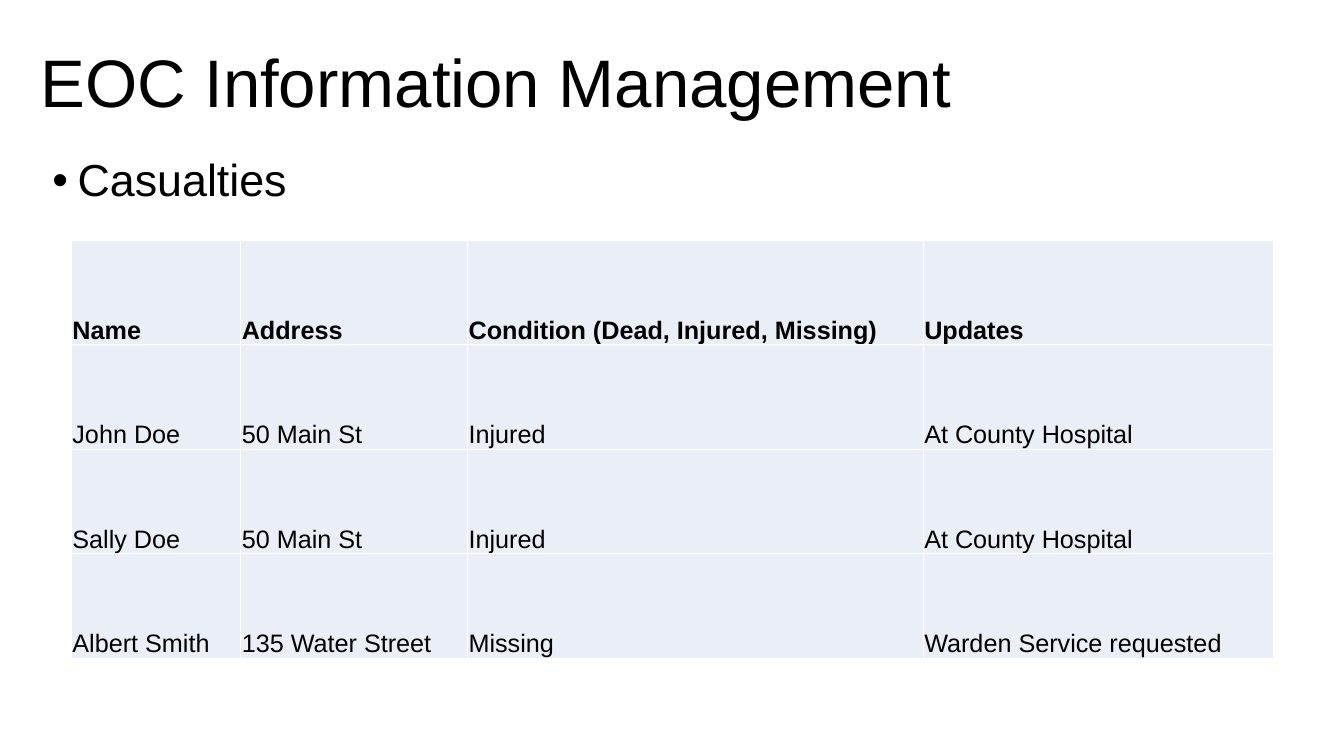
"""Build the EOC casualties slide with its status table."""
from lxml import etree
from pptx import Presentation
from pptx.dml.color import RGBColor
from pptx.enum.text import MSO_ANCHOR, MSO_AUTO_SIZE, PP_ALIGN
from pptx.oxml.ns import qn
from pptx.util import Pt

LEFT = PP_ALIGN.LEFT
TOP, MIDDLE, BOTTOM = MSO_ANCHOR.TOP, MSO_ANCHOR.MIDDLE, MSO_ANCHOR.BOTTOM
NO_FIT = MSO_AUTO_SIZE.NONE
COLORS = {"text": "000000", "cell": "EAEFF7", "border": "FFFFFF"}
COL_WIDTHS = [121, 162, 325.5, 250.5]
ROW_HEIGHT = 74.7
ROWS = [
    ["Name", "Address", "Condition (Dead, Injured, Missing)", "Updates"],
    ["John Doe", "50 Main St", "Injured", "At County Hospital"],
    ["Sally Doe", "50 Main St", "Injured", "At County Hospital"],
    ["Albert Smith", "135 Water Street", "Missing", "Warden Service requested"],
]


def style_text(p, size, bold=False):
    p.alignment = LEFT
    for r in p.runs:
        r.font.name = "Arial"
        r.font.size = Pt(size)
        r.font.bold = bold
        r.font.color.rgb = RGBColor.from_string(COLORS["text"])


def add_borders(cell):
    tcPr = cell._tc.get_or_add_tcPr()
    for side in ("lnL", "lnR", "lnT", "lnB"):
        ln = etree.SubElement(tcPr, qn(f"a:{side}"), w=str(Pt(1)))
        fill = etree.SubElement(ln, qn("a:solidFill"))
        etree.SubElement(fill, qn("a:srgbClr"), val=COLORS["border"])


prs = Presentation()
prs.slide_width, prs.slide_height = Pt(960), Pt(540)
s = prs.slides.add_slide(prs.slide_layouts[1])
title, body = s.placeholders

for sp, text, box, size, anchor in (
    (title, "EOC Information Management", (21.6, 23, 922.3, 76.3), 48, MIDDLE),
    (body, "Casualties", (30.2, 109.4, 185.8, 61.2), 32, TOP),
):
    sp.left, sp.top, sp.width, sp.height = [Pt(v) for v in box]
    tf = sp.text_frame
    tf.text = text
    tf.word_wrap = True
    tf.auto_size = NO_FIT
    tf.vertical_anchor = anchor
    p = tf.paragraphs[0]
    p.line_spacing = 0.9
    p.space_before = Pt(0)
    style_text(p, size)

pPr = body.text_frame.paragraphs[0]._p.get_or_add_pPr()
pPr.set("marL", str(Pt(18)))
pPr.set("indent", str(Pt(-18)))
etree.SubElement(pPr, qn("a:buFont"), typeface="Arial")
etree.SubElement(pPr, qn("a:buChar"), char="•")

table = s.shapes.add_table(
    len(ROWS), len(COL_WIDTHS), Pt(51), Pt(171.4),
    Pt(sum(COL_WIDTHS)), Pt(ROW_HEIGHT * len(ROWS)),
).table
table.horz_banding = False
for col, width in zip(table.columns, COL_WIDTHS):
    col.width = Pt(width)

for i, values in enumerate(ROWS):
    table.rows[i].height = Pt(ROW_HEIGHT)
    for j, value in enumerate(values):
        cell = table.cell(i, j)
        cell.text = value
        cell.vertical_anchor = BOTTOM
        cell.margin_left = cell.margin_right = cell.margin_top = Pt(0.75)
        cell.margin_bottom = Pt(0)
        add_borders(cell)
        cell.fill.solid()
        cell.fill.fore_color.rgb = RGBColor.from_string(COLORS["cell"])
        style_text(cell.text_frame.paragraphs[0], 18, bold=i == 0)

prs.save("out.pptx")
